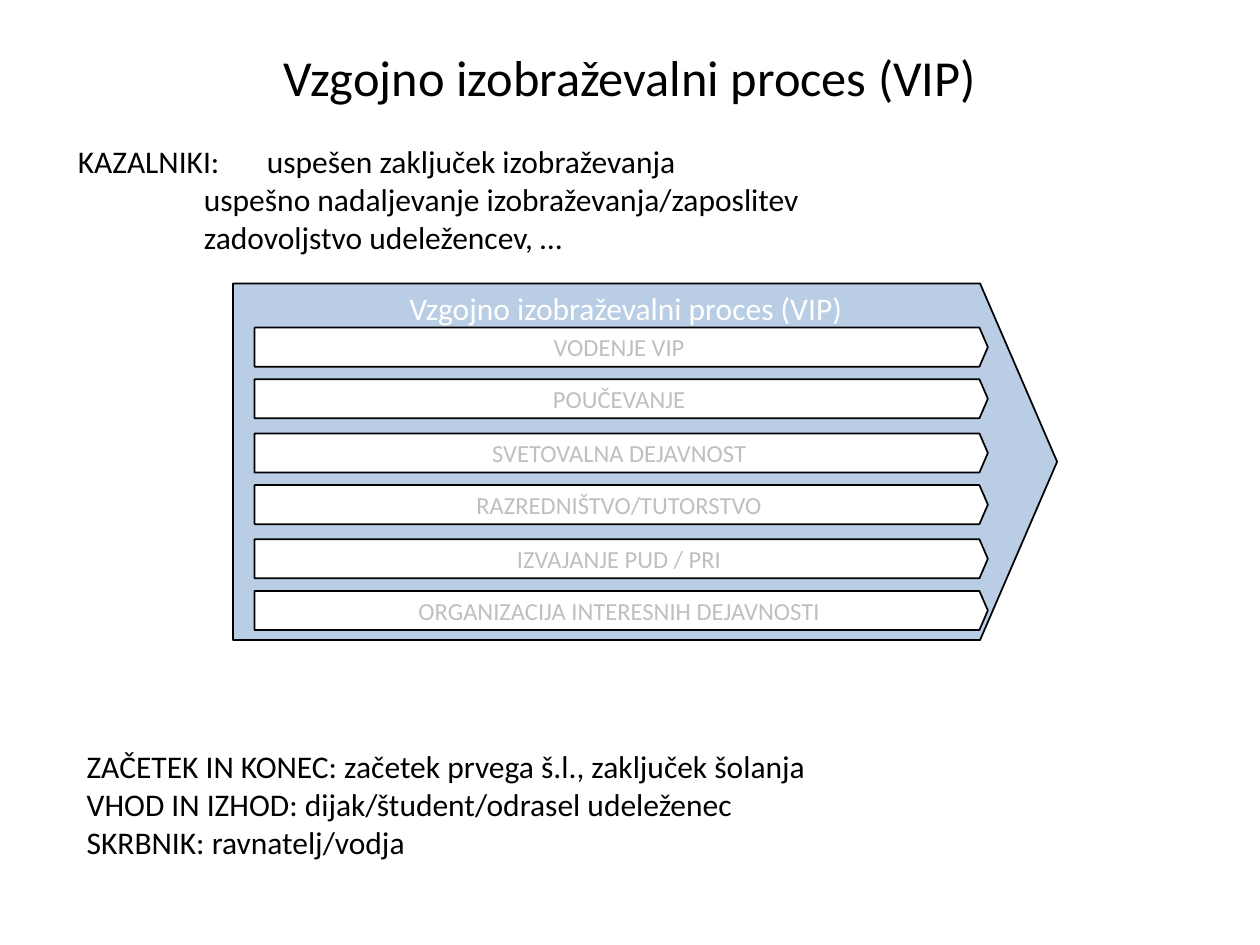
from dataclasses import dataclass

from pptx import Presentation
from pptx.dml.color import RGBColor
from pptx.enum.shapes import MSO_SHAPE
from pptx.enum.text import MSO_ANCHOR, PP_ALIGN
from pptx.util import Inches, Pt

ARROW = MSO_SHAPE.PENTAGON
TOP, MIDDLE = MSO_ANCHOR.TOP, MSO_ANCHOR.MIDDLE
LEFT, CENTER = PP_ALIGN.LEFT, PP_ALIGN.CENTER


@dataclass(frozen=True)
class Theme:
    font: str = "Calibri"
    ink: str = "000000"
    pale: str = "FFFFFF"
    grey: str = "BFBFBF"
    blue: str = "B9CDE5"
    title: float = 28.8
    body: float = 18
    small: float = 14
    line: float = 1
    point: float = 0.216


class Page:
    def __init__(self, slide, theme):
        self.slide = slide
        self.theme = theme

    def label(self, shape, lines, size, color, align, anchor):
        frame = shape.text_frame
        frame.word_wrap = True
        frame.vertical_anchor = anchor
        for i, line in enumerate(lines):
            para = frame.paragraphs[0] if i == 0 else frame.add_paragraph()
            para.alignment = align
            run = para.add_run()
            run.text = line
            run.font.name = self.theme.font
            run.font.size = Pt(size)
            run.font.color.rgb = RGBColor.from_string(color)

    def text(self, box, lines, size, align=LEFT, anchor=TOP):
        shape = self.slide.shapes.add_textbox(*map(Inches, box))
        self.label(shape, lines, size, self.theme.ink, align, anchor)

    def arrow(self, box, line, size, fill, color, anchor=MIDDLE):
        shape = self.slide.shapes.add_shape(ARROW, *map(Inches, box))
        shape.adjustments[0] = self.theme.point
        shape.shadow.inherit = False
        shape.fill.solid()
        shape.fill.fore_color.rgb = RGBColor.from_string(fill)
        shape.line.color.rgb = RGBColor.from_string(self.theme.ink)
        shape.line.width = Pt(self.theme.line)
        self.label(shape, [line], size, color, CENTER, anchor)
        return shape


TITLE = "Vzgojno izobraževalni proces (VIP)"
STEPS = [
    "VODENJE VIP",
    "POUČEVANJE",
    "SVETOVALNA DEJAVNOST",
    "RAZREDNIŠTVO/TUTORSTVO",
    "IZVAJANJE PUD / PRI",
    "ORGANIZACIJA INTERESNIH DEJAVNOSTI",
]
GOALS = [
    "KAZALNIKI: \tuspešen zaključek izobraževanja",
    "\t\tuspešno nadaljevanje izobraževanja/zaposlitev",
    "\t\tzadovoljstvo udeležencev, …",
]
FACTS = [
    "ZAČETEK IN KONEC: začetek prvega š.l., zaključek šolanja",
    "VHOD IN IZHOD: dijak/študent/odrasel udeleženec",
    "SKRBNIK: ravnatelj/vodja",
]


def main():
    deck = Presentation()
    deck.slide_width, deck.slide_height = Inches(10), Inches(7.5)
    theme = Theme()
    page = Page(deck.slides.add_slide(deck.slide_layouts[6]), theme)

    page.text((0.5, 0.3, 9, 0.61), [TITLE], theme.title, CENTER, MIDDLE)
    page.text((0.52, 1.08, 8.26, 1.31), GOALS, theme.body)

    process = page.arrow((1.85, 2.25, 6.54, 2.83), TITLE, theme.body,
                         theme.blue, theme.pale, TOP)
    process.text_frame.margin_top = Inches(0.04)

    # Steps stand in pairs, a little closer within a pair than between pairs
    for i, step in enumerate(STEPS):
        pair, second = divmod(i, 2)
        top = 2.6 + 0.84 * pair + 0.41 * second
        page.arrow((2.02, top, 5.82, 0.31), step, theme.small,
                   theme.pale, theme.grey)

    page.text((0.59, 5.88, 6.3, 1.01), FACTS, theme.body)
    deck.save("out.pptx")


if __name__ == "__main__":
    main()
